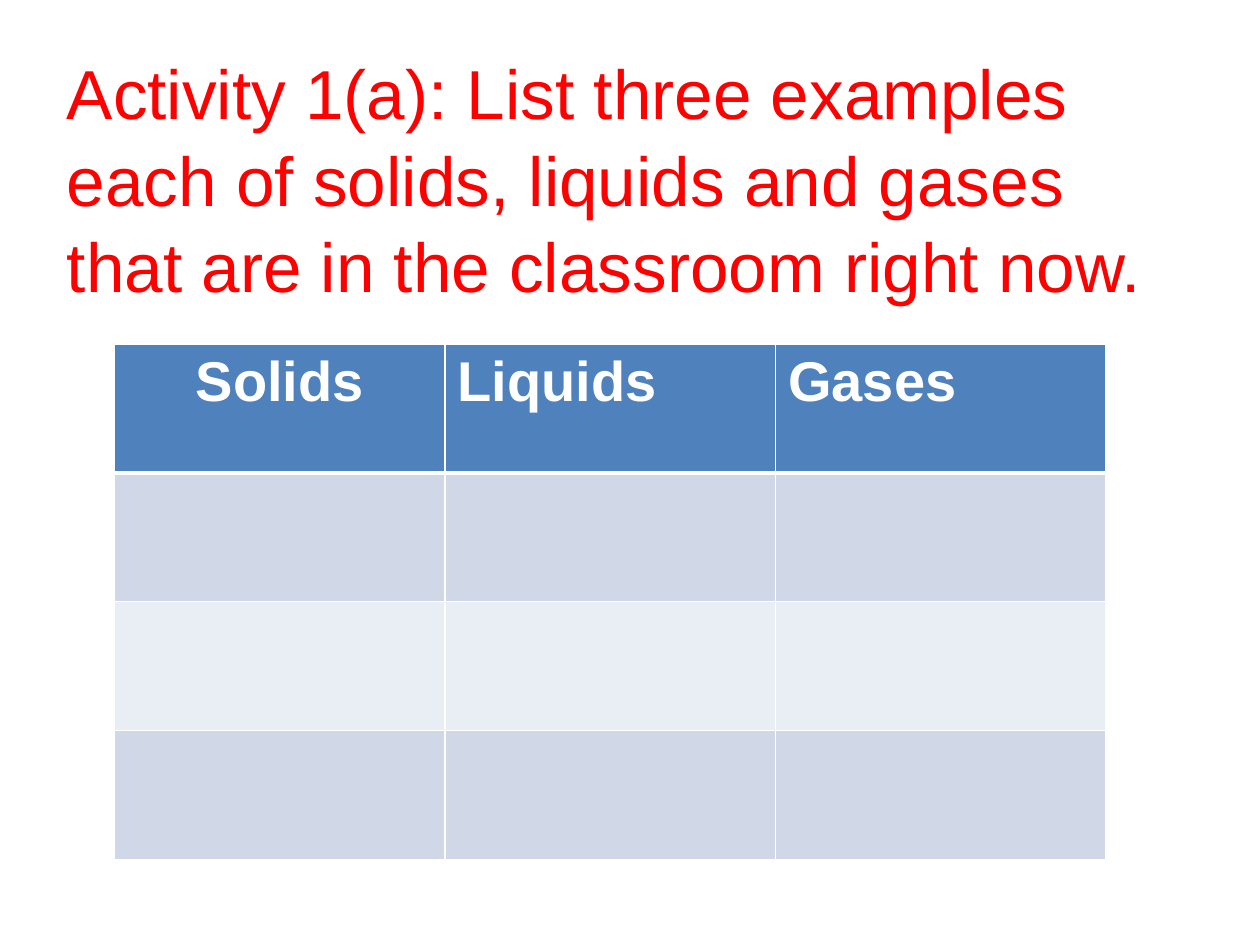
import pptx
import pptx.util
import pptx.dml.color
import pptx.enum.text
import pptx.oxml
import pptx.oxml.ns
from lxml import etree

Pt = pptx.util.Pt
RGBColor = pptx.dml.color.RGBColor

RED = RGBColor(0xFF, 0x00, 0x00)
WHITE = RGBColor(0xFF, 0xFF, 0xFF)
HEADER_BLUE = RGBColor(0x4F, 0x81, 0xBD)
BAND_DARK = RGBColor(0xD0, 0xD8, 0xE8)
BAND_LIGHT = RGBColor(0xE9, 0xED, 0xF4)

FONT = "Arial"
TITLE = ("Activity 1(a): List three examples each of solids, "
         "liquids and gases that are in the classroom right now.")
STATES = ["Solids", "Liquids", "Gases"]
EXAMPLE_ROWS = 3


def style_paragraph(para, size, color, bold, align):
    para.font.name = FONT
    para.font.size = Pt(size)
    para.font.color.rgb = color
    para.font.bold = bold
    para.alignment = align


def add_title(page, left, top, width, height):
    title = page.shapes.title
    title.left, title.top = Pt(left), Pt(top)
    title.width, title.height = Pt(width), Pt(height)
    frame = title.text_frame
    frame.text = TITLE
    frame.word_wrap = True
    frame.auto_size = pptx.enum.text.MSO_AUTO_SIZE.NONE
    frame.vertical_anchor = pptx.enum.text.MSO_ANCHOR.MIDDLE
    para = frame.paragraphs[0]
    para.line_spacing = 1.04
    style_paragraph(para, 39.6, RED, False, pptx.enum.text.PP_ALIGN.LEFT)


def set_borders(cell, color, widths):
    """Draw the cell's borders; widths maps the sides L, R, T, B to points."""
    properties = cell._tc.get_or_add_tcPr()
    for position, side in enumerate("LRTB"):
        line = etree.Element(pptx.oxml.ns.qn(f"a:ln{side}"), w=str(Pt(widths[side])))
        fill = etree.SubElement(line, pptx.oxml.ns.qn("a:solidFill"))
        etree.SubElement(fill, pptx.oxml.ns.qn("a:srgbClr"), val=str(color))
        properties.insert(position, line)


def add_states_table(page, left, top, width, height):
    row_count = EXAMPLE_ROWS + 1
    table = page.shapes.add_table(row_count, len(STATES), Pt(left), Pt(top),
                                  Pt(width), Pt(height)).table
    for column in table.columns:
        column.width = Pt(width / len(STATES))
    for row in table.rows:
        row.height = Pt(height / row_count)

    row_fills = [HEADER_BLUE, BAND_DARK, BAND_LIGHT, BAND_DARK]
    for row_index, (row, color) in enumerate(zip(table.rows, row_fills)):
        for cell in row.cells:
            cell.fill.solid()
            cell.fill.fore_color.rgb = color
            set_borders(cell, WHITE, {"L": 1, "R": 1,
                                      "T": 3 if row_index == 1 else 1,
                                      "B": 3 if row_index == 0 else 1})

    align = pptx.enum.text.PP_ALIGN
    for column_index, state in enumerate(STATES):
        cell = table.cell(0, column_index)
        cell.text = state
        style_paragraph(cell.text_frame.paragraphs[0], 32, WHITE, True,
                        align.CENTER if column_index == 0 else align.LEFT)


def main():
    deck = pptx.Presentation()
    deck.slide_width, deck.slide_height = Pt(720), Pt(540)
    page = deck.slides.add_slide(deck.slide_layouts.get_by_name("Title Only"))
    add_title(page, 31, 43.2, 657.4, 115.9)
    add_states_table(page, 65.5, 196.6, 566.6, 294.5)
    deck.save("out.pptx")


if __name__ == "__main__":
    main()
